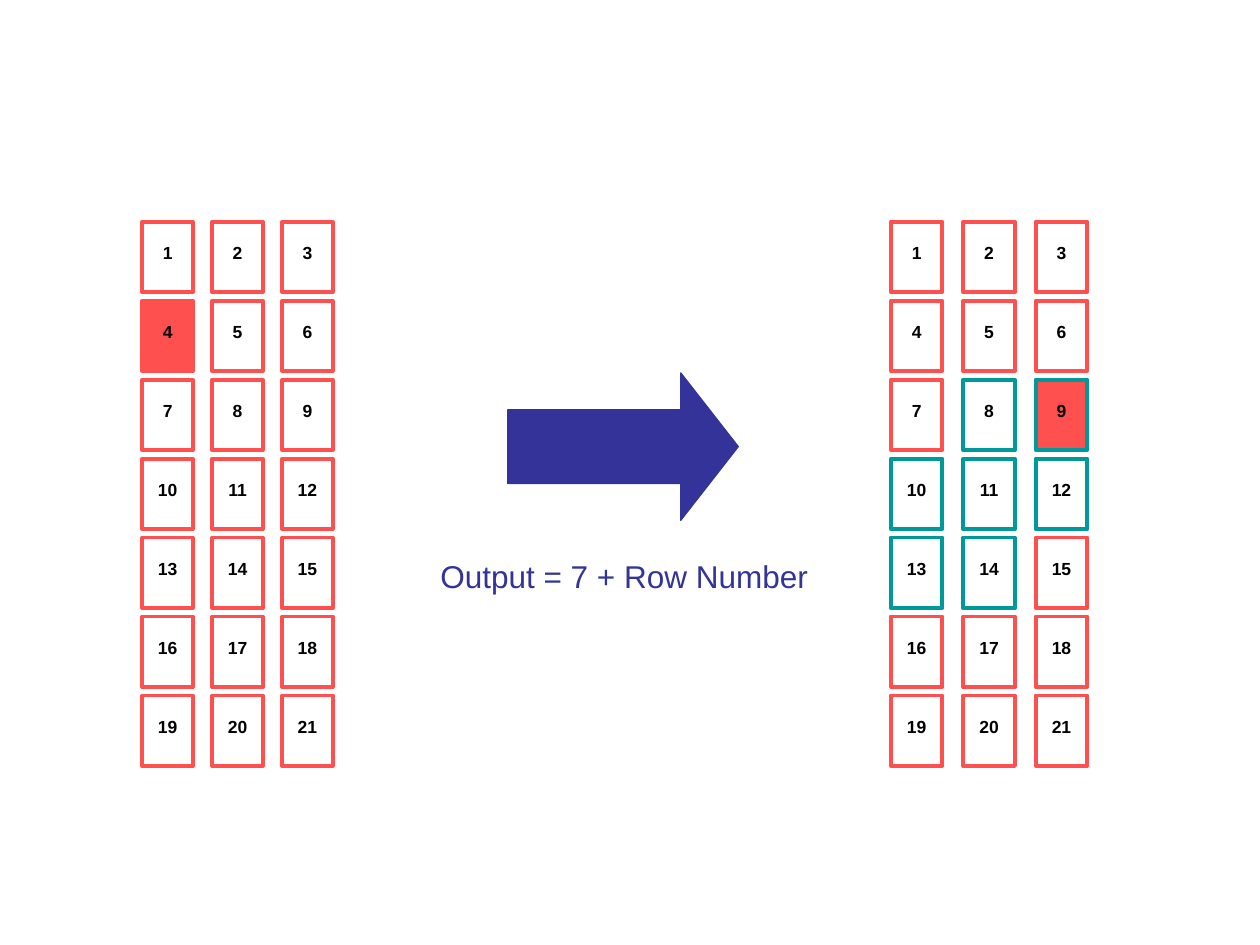
from pptx import Presentation
from pptx.dml.color import RGBColor
from pptx.enum.shapes import MSO_SHAPE as Shape
from pptx.enum.text import PP_ALIGN as Align
from pptx.util import Inches, Pt

RED = RGBColor(0xFF, 0x50, 0x50)
TEAL = RGBColor(0x00, 0x99, 0x99)
INDIGO = RGBColor(0x33, 0x33, 0x99)
BLACK = RGBColor(0x00, 0x00, 0x00)

ROWS, COLUMNS = 7, 3
GRID_TOP = 1.76
ROW_PITCH = 3.76 / (ROWS - 1)
CELL_HEIGHT = 0.56
LABEL_MARGIN = 0.06

# left, column pitch, cell width, filled number, numbers outlined in teal
GRIDS = [
    (1.13, 0.555, 0.4, 4, ()),
    (7.07, 0.575, 0.41, 9, range(8, 15)),
]


def add_label(shapes, text, left, top, width, height, size, color, bold=False):
    box = shapes.add_textbox(Inches(left), Inches(top), Inches(width), Inches(height))
    box.text_frame.word_wrap = True
    para = box.text_frame.paragraphs[0]
    para.text = text
    para.alignment = Align.CENTER
    font = para.runs[0].font
    font.name = "Arial"
    font.size = Pt(size)
    font.bold = bold
    font.color.rgb = color


def add_outlined(shapes, kind, left, top, width, height, line_color, line_width, fill=None):
    shape = shapes.add_shape(kind, Inches(left), Inches(top), Inches(width), Inches(height))
    shape.shadow.inherit = False
    shape.line.color.rgb = line_color
    shape.line.width = Pt(line_width)
    if fill is None:
        shape.fill.background()
    else:
        shape.fill.solid()
        shape.fill.fore_color.rgb = fill
    return shape


deck = Presentation()
deck.slide_width = Inches(10)
deck.slide_height = Inches(7.5)
page = deck.slides.add_slide(deck.slide_layouts[6])

add_label(page.shapes, "Output = 7 + Row Number", 3.37, 4.37, 3.17, 0.4, 18, INDIGO)

for grid_left, column_pitch, cell_width, filled, teal_numbers in GRIDS:
    grid = page.shapes.add_group_shape()
    for column in range(COLUMNS):
        for row in range(ROWS):
            number = row * COLUMNS + column + 1
            left = grid_left + column * column_pitch
            top = GRID_TOP + row * ROW_PITCH
            outline = TEAL if number in teal_numbers else RED
            fill = RED if number == filled else None
            add_outlined(grid.shapes, Shape.RECTANGLE, left, top,
                         cell_width, CELL_HEIGHT, outline, 2.25, fill)
            add_label(grid.shapes, str(number), left - LABEL_MARGIN, top + 0.11,
                      cell_width + 2 * LABEL_MARGIN, 0.37, 10, BLACK, bold=True)

arrow = add_outlined(page.shapes, Shape.RIGHT_ARROW, 4.03, 2.96, 1.83, 1.17,
                     INDIGO, 0.75, INDIGO)
arrow.adjustments[0] = 0.5
arrow.adjustments[1] = 0.39

deck.save("out.pptx")
